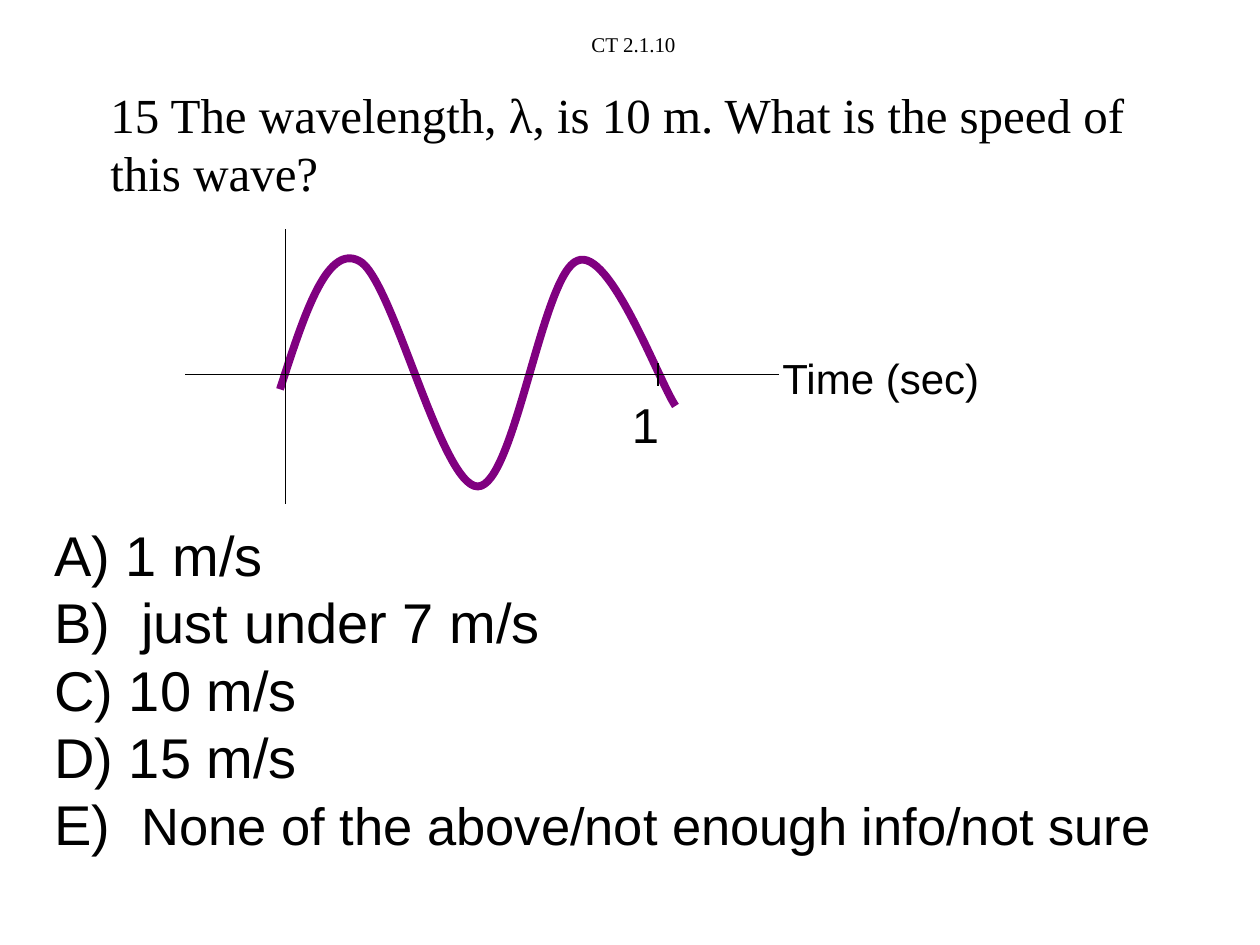
from lxml import etree
from pptx import Presentation
from pptx.dml.color import RGBColor
from pptx.enum.shapes import MSO_CONNECTOR
from pptx.enum.text import MSO_ANCHOR, MSO_AUTO_SIZE, PP_ALIGN
from pptx.oxml.ns import qn
from pptx.util import Pt

BLACK = RGBColor(0x00, 0x00, 0x00)
PURPLE = RGBColor(0x80, 0x00, 0x80)
STRAIGHT = MSO_CONNECTOR.STRAIGHT
TOP, MIDDLE = MSO_ANCHOR.TOP, MSO_ANCHOR.MIDDLE
FIXED, GROW = MSO_AUTO_SIZE.NONE, MSO_AUTO_SIZE.SHAPE_TO_FIT_TEXT
LEFT, CENTER = PP_ALIGN.LEFT, PP_ALIGN.CENTER
SERIF, SANS = "Times New Roman", "Arial"
TITLE_ONLY = 5

WAVE = [
    (160, 222.5),
    (173.5, 181), (186.5, 139.5), (205, 149),
    (224, 157.5), (252, 278), (273, 278),
    (294, 278), (310, 156), (330, 149),
    (348.5, 141), (376.5, 218), (386, 232),
]
AXES = [
    ((106, 214), (445, 214), 1),
    ((163, 131), (163, 288), 0.75),
    ((376, 207.5), (376, 220.5), 1.5),
]
ANSWERS = [
    (True, [(" 1 m/s", 32)]),
    (True, [("  just under 7 m/s", 32)]),
    (False, [("C) 10 m/s", 32)]),
    (False, [("D) 15 m/s", 32)]),
    (False, [("E)  ", 32), ("None of the above/not enough info/not sure", 30)]),
]


def apply(target, values):
    """Set each named attribute on the target."""
    for name, value in values.items():
        setattr(target, name, value)


def add_run(paragraph, text, font, size):
    """Append one black run to a paragraph."""
    run = paragraph.add_run()
    run.text = text
    apply(run.font, {"name": font, "size": Pt(size), "bold": False})
    run.font.color.rgb = BLACK


def place(shape, left, top, width, height):
    """Position a shape, in points."""
    apply(shape, {"left": Pt(left), "top": Pt(top),
                  "width": Pt(width), "height": Pt(height)})


def add_box(slide, bounds, wrap=True, fit=GROW):
    """Add an empty text box and return its text frame."""
    frame = slide.shapes.add_textbox(*map(Pt, bounds)).text_frame
    apply(frame, {"word_wrap": wrap, "auto_size": fit, "vertical_anchor": TOP})
    return frame


def add_label(slide, bounds, text, font, size, wrap=False, fit=GROW):
    """Add a text box that holds a single run."""
    paragraph = add_box(slide, bounds, wrap, fit).paragraphs[0]
    paragraph.alignment = LEFT
    add_run(paragraph, text, font, size)


def add_title(slide, text):
    """Format the title placeholder as a small centred heading."""
    title = slide.shapes.title
    place(title, 56, 13.5, 612, 24)
    apply(title.text_frame, {"word_wrap": True, "auto_size": FIXED,
                             "vertical_anchor": MIDDLE})
    paragraph = title.text_frame.paragraphs[0]
    paragraph.alignment = CENTER
    add_run(paragraph, text, SERIF, 12)


def add_wave(slide, points):
    """Draw a cubic curve through a start point and triples of points."""
    start, *rest = [(Pt(x), Pt(y)) for x, y in points]
    builder = slide.shapes.build_freeform(*start)
    builder.add_line_segments(rest, close=False)
    wave = builder.convert_to_shape()
    wave.shadow.inherit = False
    wave.fill.background()
    wave.line.color.rgb = PURPLE
    wave.line.width = Pt(4.5)
    outline = wave.element.find(".//" + qn("a:path"))
    segments = outline.findall(qn("a:lnTo"))
    for first in range(0, len(segments), 3):
        curve = etree.SubElement(outline, qn("a:cubicBezTo"))
        for segment in segments[first:first + 3]:
            curve.append(segment[0])
            outline.remove(segment)


def add_axis(slide, start, end, weight):
    """Draw a straight black line without shadow."""
    axis = slide.shapes.add_connector(STRAIGHT, *map(Pt, start + end))
    axis.line.color.rgb = BLACK
    axis.line.width = Pt(weight)
    etree.SubElement(axis.element.spPr, qn("a:effectLst"))


def add_answers(slide, answers):
    """List the answers, lettered automatically where asked."""
    frame = add_box(slide, (24, 294, 678, 199.5))
    for index, (lettered, runs) in enumerate(answers):
        paragraph = frame.add_paragraph() if index else frame.paragraphs[0]
        paragraph.alignment = LEFT
        for text, size in runs:
            add_run(paragraph, text, SANS, size)
        properties = paragraph._p.get_or_add_pPr()
        properties.set("marL", str(Pt(27)))
        properties.set("indent", str(-Pt(27)))
        if lettered:
            etree.SubElement(properties, qn("a:buFont"), typeface=SANS)
            etree.SubElement(properties, qn("a:buAutoNum"), type="alphaUcParenR")


def main():
    """Build the wave speed question slide."""
    deck = Presentation()
    apply(deck, {"slide_width": Pt(720), "slide_height": Pt(540)})
    slide = deck.slides.add_slide(deck.slide_layouts[TITLE_ONLY])
    add_title(slide, "CT 2.1.10")
    add_label(slide, (56, 44.5, 612, 75),
              "15 The wavelength, λ, is 10 m. What is the speed of this wave?",
              SERIF, 28, wrap=True, fit=FIXED)
    add_wave(slide, WAVE)
    for axis in AXES:
        add_axis(slide, *axis)
    add_label(slide, (354, 222, 40, 31), "1", SANS, 28)
    add_label(slide, (440, 198, 171, 27), "Time (sec)", SANS, 24)
    add_answers(slide, ANSWERS)
    deck.save("out.pptx")


if __name__ == "__main__":
    main()
